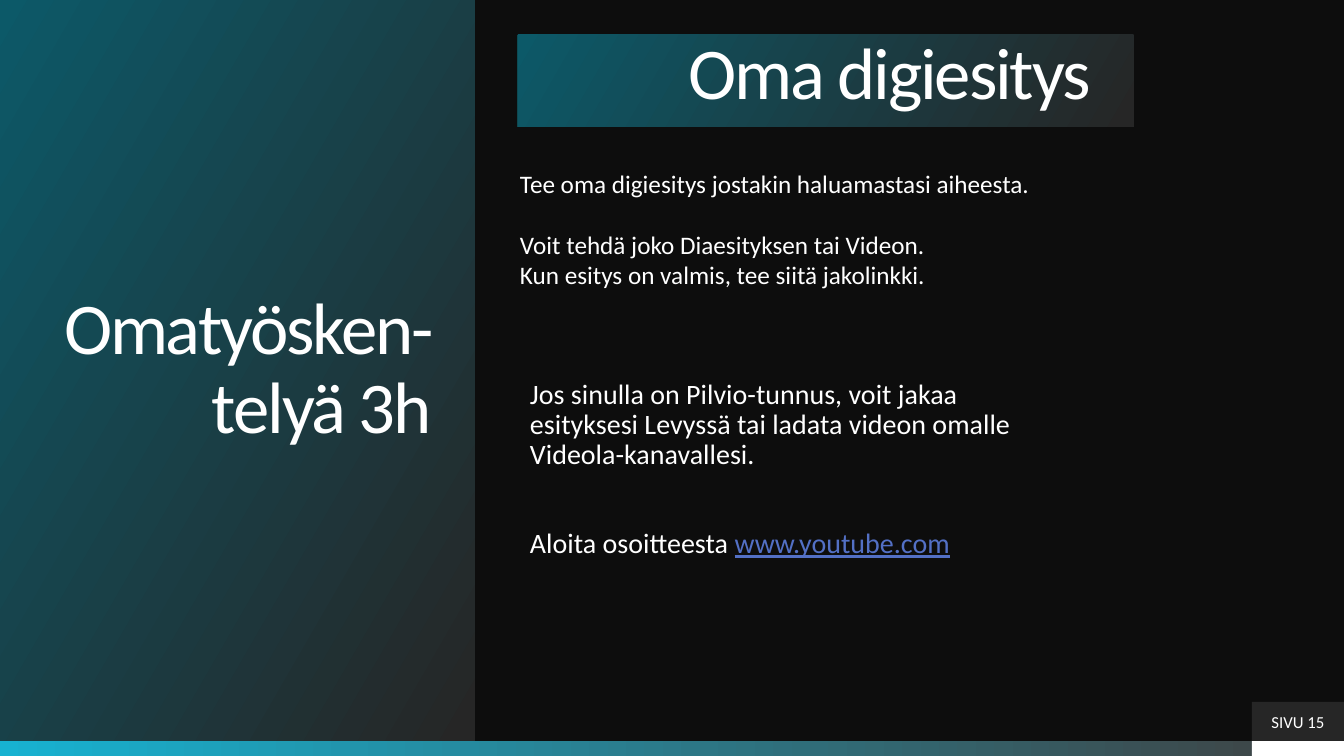
from pptx import Presentation
from pptx import util as u
from pptx.dml.color import RGBColor
from pptx.enum import shapes, text

PX = 914400 / 100.8
WIDTH, HEIGHT = 1344, 756
BAR = 15
PANEL_HEIGHT = HEIGHT - BAR
TAG_WIDTH, TAG_HEIGHT = 92, 39
TAG_LEFT = WIDTH - TAG_WIDTH
HEADING_LEFT = 518

BLACK = RGBColor(0x0D, 0x0D, 0x0D)
WHITE = RGBColor(0xFF, 0xFF, 0xFF)
CHARCOAL = RGBColor(0x26, 0x26, 0x26)
GRAY = RGBColor(0x40, 0x40, 0x40)
TEAL = RGBColor(0x0C, 0x59, 0x68)
CYAN = RGBColor(0x17, 0xB2, 0xD1)
LINK = RGBColor(0x53, 0x70, 0xC5)
PANEL_FILL = dict(colors=(CHARCOAL, TEAL), start=0.01, angle=150)


def px(length):
    return u.Emu(round(length * PX))


def add_block(page, left, top, width, height, colors, start=0, angle=0):
    """Add a borderless rectangle with one solid colour or a two-colour gradient."""
    block = page.shapes.add_shape(
        shapes.MSO_SHAPE.RECTANGLE, px(left), px(top), px(width), px(height))
    block.shadow.inherit = False
    block.line.fill.background()
    if len(colors) == 1:
        block.fill.solid()
        block.fill.fore_color.rgb = colors[0]
    else:
        block.fill.gradient()
        block.fill.gradient_angle = angle
        for stop, color, position in zip(block.fill.gradient_stops, colors, (start, 1)):
            stop.color.rgb = color
            stop.position = position
    return block


def add_text_box(page, left, top, width, height):
    return page.shapes.add_textbox(px(left), px(top), px(width), px(height))


def set_frame(box, anchor=text.MSO_ANCHOR.TOP, sides=10, top=5, bottom=5):
    frame = box.text_frame
    frame.word_wrap = True
    frame.vertical_anchor = anchor
    frame.margin_left = frame.margin_right = px(sides)
    frame.margin_top, frame.margin_bottom = px(top), px(bottom)
    return frame


def add_span(para, words, size, color=WHITE, underline=None, tracking=None):
    """Add a run; tracking is in hundredths of a point."""
    span = para.add_run()
    span.text = words
    span.font.name = "Calibri"
    span.font.size = u.Pt(size)
    span.font.color.rgb = color
    span.font.underline = underline
    if tracking:
        span._r.get_or_add_rPr().set("spc", str(tracking))


def add_para(frame, words, size, align=text.PP_ALIGN.LEFT, line=1.0, before=0, **style):
    first = frame.paragraphs[0]
    para = frame.add_paragraph() if first.runs else first
    para.alignment = align
    para.line_spacing = line
    para.space_before = u.Pt(before)
    add_span(para, words, size, **style)
    return para


def add_title_panel(page, left, top, width, height, words, line):
    panel = add_block(page, left, top, width, height, **PANEL_FILL)
    frame = set_frame(panel, text.MSO_ANCHOR.MIDDLE, sides=43, top=0, bottom=0)
    add_para(frame, words, 52, text.PP_ALIGN.RIGHT, line, tracking=-150)


def add_page_tag(page, words):
    tag = add_block(page, TAG_LEFT, PANEL_HEIGHT - TAG_HEIGHT, TAG_WIDTH, TAG_HEIGHT,
                    [CHARCOAL])
    frame = set_frame(tag, text.MSO_ANCHOR.MIDDLE)
    add_para(frame, words, 12, text.PP_ALIGN.CENTER)


def add_task(page):
    frame = set_frame(add_text_box(page, 510, 163, 697, 132))
    add_para(frame, "Tee oma digiesitys jostakin haluamastasi aiheesta.", 18)
    add_para(frame, "Voit tehdä joko Diaesityksen tai Videon.", 18, before=22)
    add_para(frame, "Kun esitys on valmis, tee siitä jakolinkki.", 18)


def add_sharing(page):
    box = add_text_box(page, HEADING_LEFT, 371, 518, 319)
    frame = set_frame(box, sides=12, top=9, bottom=12)
    add_para(frame, "Jos sinulla on Pilvio-tunnus, voit jakaa esityksesi Levyssä "
             "tai ladata videon omalle Videola-kanavallesi.", 20, line=0.9)
    start = add_para(frame, "Aloita osoitteesta ", 20, line=0.9, before=42)
    add_span(start, "www.youtube.com", 20, LINK, underline=True)


def main():
    deck = Presentation()
    deck.slide_width, deck.slide_height = px(WIDTH), px(HEIGHT)
    page = deck.slides.add_slide(deck.slide_layouts[6])
    page.background.fill.solid()
    page.background.fill.fore_color.rgb = BLACK

    add_block(page, 0, PANEL_HEIGHT, WIDTH, BAR, (CYAN, GRAY))
    add_block(page, TAG_LEFT, PANEL_HEIGHT, TAG_WIDTH, BAR, [WHITE])
    add_title_panel(page, 0, 0, 475, PANEL_HEIGHT, "Omatyösken-telyä 3h", 0.9)
    add_page_tag(page, "SIVU 15")
    add_title_panel(page, HEADING_LEFT, 35, 616, 92, "Oma digiesitys", 0.7)
    add_task(page)
    add_sharing(page)
    deck.save("out.pptx")


if __name__ == "__main__":
    main()
